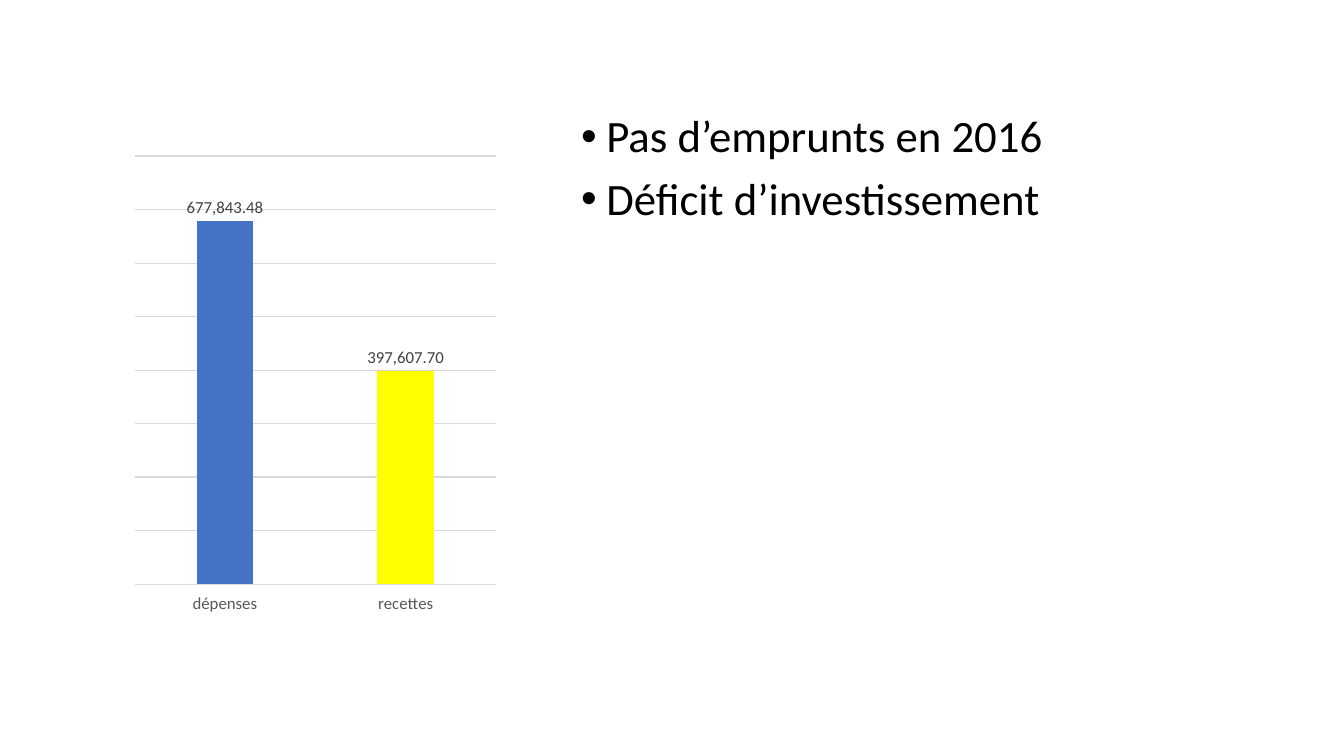
from lxml import etree
from pptx import Presentation
from pptx.chart.data import CategoryChartData
from pptx.dml.color import RGBColor
from pptx.enum.chart import XL_CHART_TYPE as ChartType, XL_LABEL_POSITION as LabelPos
from pptx.enum.chart import XL_TICK_LABEL_POSITION as TickLabels, XL_TICK_MARK as TickMark
from pptx.oxml import parse_xml
from pptx.oxml.ns import nsdecls, qn
from pptx.util import Pt

BULLETS = ["Pas d’emprunts en 2016", "Déficit d’investissement"]
BUDGET = {"dépenses": 677843.48, "recettes": 397607.7}
COLORS = {"text": "000000", "axis": "595959", "label": "404040", "grid": "D9D9D9",
          "dépenses": "4472C4", "recettes": "FFFF00"}
FONT = "Calibri"
NUMBER_FORMAT = "#,##0.00"
SLIDE_SIZE = (960, 540)
TEXT_BOX = (408, 78, 486, 384)
CHART_BOX = (52, 86, 315, 364)
PLOT = {"x": 0.14, "y": 0.07, "w": 0.82, "h": 0.84}
BULLET_INDENT = 18


def rgb(name):
    return RGBColor.from_string(COLORS[name])


def set_font(font, size, color):
    font.name, font.size = FONT, Pt(size)
    font.color.rgb = rgb(color)


def set_line(line):
    line.color.rgb = rgb("grid")
    line.width = Pt(0.75)


def add_bullets(slide, lines, box, size=32, color="text"):
    tf = slide.shapes.add_textbox(*map(Pt, box)).text_frame
    tf.word_wrap = True
    for i, line in enumerate(lines):
        p = tf.paragraphs[0] if i == 0 else tf.add_paragraph()
        p.line_spacing, p.space_before = 0.9, Pt(10)
        pPr = p._p.get_or_add_pPr()
        pPr.set("marL", str(Pt(BULLET_INDENT)))
        pPr.set("indent", str(-Pt(BULLET_INDENT)))
        etree.SubElement(pPr, qn("a:buFont")).set("typeface", "Arial")
        etree.SubElement(pPr, qn("a:buChar")).set("char", "•")
        r = p.add_run()
        r.text = line
        set_font(r.font, size, color)


def place_plot(chart):
    """Fix the inner plot area, in fractions of the chart frame."""
    area = chart._chartSpace.find(".//" + qn("c:plotArea"))
    for old in area.findall(qn("c:layout")):
        area.remove(old)
    modes = "".join(f'<c:{k}Mode val="edge"/>' for k in "xy")
    sizes = "".join(f'<c:{k} val="{v}"/>' for k, v in PLOT.items())
    area.insert(0, parse_xml(
        f'<c:layout {nsdecls("c")}><c:manualLayout><c:layoutTarget val="inner"/>'
        f'{modes}{sizes}</c:manualLayout></c:layout>'))


def add_budget_chart(slide):
    data = CategoryChartData(number_format=NUMBER_FORMAT)
    data.categories = list(BUDGET)
    data.add_series("Series 1", list(BUDGET.values()))
    chart = slide.shapes.add_chart(ChartType.COLUMN_CLUSTERED, *map(Pt, CHART_BOX), data).chart
    chart.has_legend = chart.has_title = False
    set_font(chart.font, 10, "text")

    plot = chart.plots[0]
    plot.gap_width, plot.overlap, plot.vary_by_categories = 219, -27, False
    plot.has_data_labels = True
    labels = plot.data_labels
    labels.show_value = True
    labels.position = LabelPos.OUTSIDE_END
    labels.number_format, labels.number_format_is_linked = NUMBER_FORMAT, False
    set_font(labels.font, 12, "label")
    for i, category in enumerate(BUDGET):
        fill = plot.series[0].points[i].format.fill
        fill.solid()
        fill.fore_color.rgb = rgb(category)

    axis = chart.category_axis
    axis.major_tick_mark = axis.minor_tick_mark = TickMark.NONE
    axis.tick_label_position = TickLabels.LOW
    set_font(axis.tick_labels.font, 12, "axis")
    set_line(axis.format.line)

    values = chart.value_axis
    values.minimum_scale, values.maximum_scale, values.major_unit = 0, 800000, 100000
    values.has_major_gridlines = True
    set_line(values.major_gridlines.format.line)
    values.visible = False
    place_plot(chart)


def main():
    prs = Presentation()
    prs.slide_width, prs.slide_height = map(Pt, SLIDE_SIZE)
    s = prs.slides.add_slide(prs.slide_layouts[6])
    add_bullets(s, BULLETS, TEXT_BOX)
    add_budget_chart(s)
    prs.save("out.pptx")


if __name__ == "__main__":
    main()
